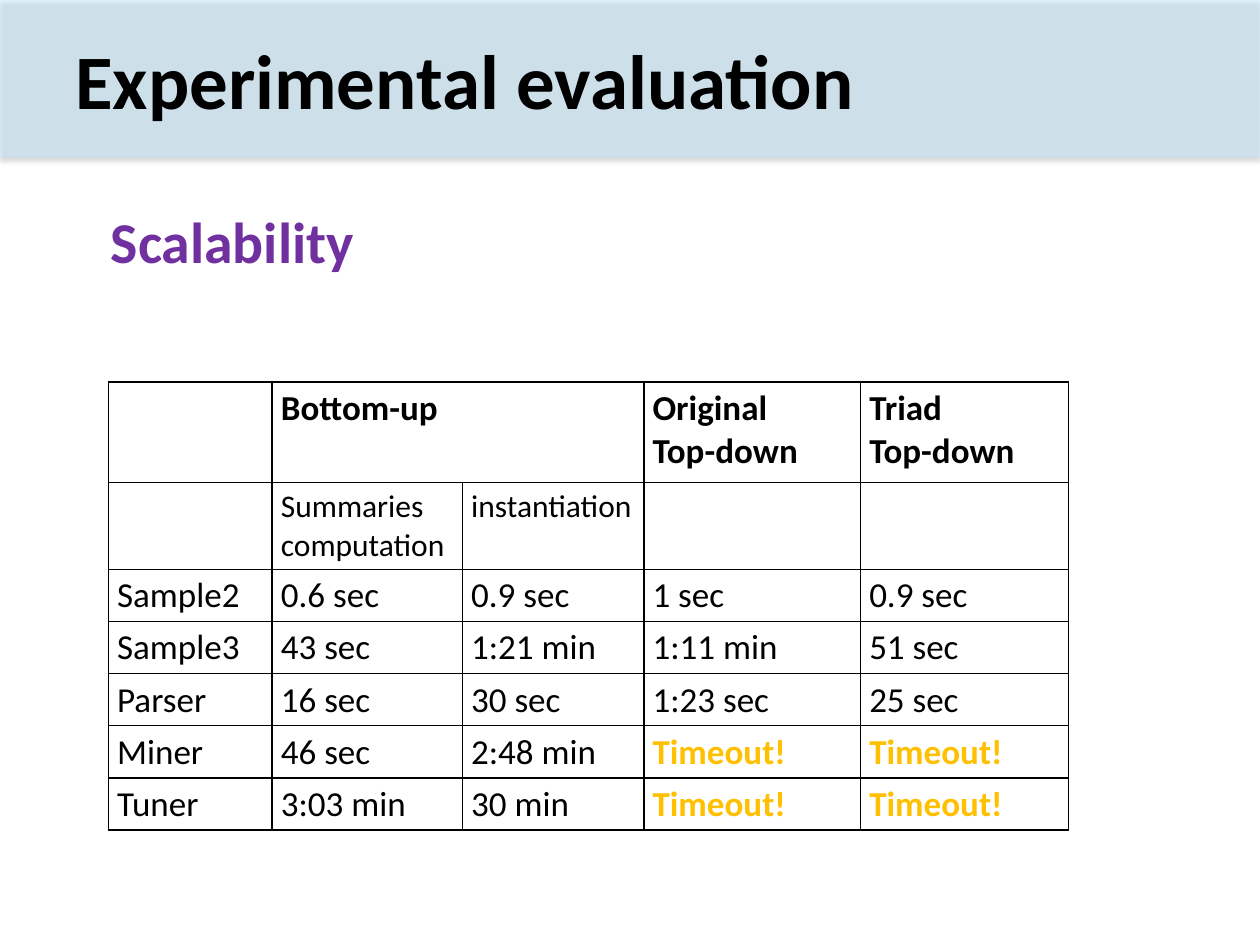
from dataclasses import dataclass

from lxml import etree
from pptx import Presentation, util as u
from pptx.dml.color import RGBColor
from pptx.enum import shapes, text
from pptx.oxml import parse_xml
from pptx.oxml.ns import nsdecls, qn

HUES = {"ink": "000000", "paper": "FFFFFF", "band": "C2EAFF",
        "topic": "7030A0", "alert": "FFC000"}
FONT = "Calibri"
PAD_X, PAD_Y = 0.07, 0.04


@dataclass
class Row:
    cells: tuple[str, ...]
    high: float = 0.41
    size: int = 20
    bold: bool = False
    fill: str | None = "paper"


COLS = (1.3, 1.51, 1.44, 1.72, 1.65)
ROWS = (
    Row(("", "Bottom-up", "", "Original\nTop-down", "Triad\nTop-down"),
        high=0.8, bold=True, fill=None),
    Row(("", "Summaries\ncomputation", "instantiation", "", ""),
        high=0.69, size=18),
    Row(("Sample2", "0.6 sec", "0.9 sec", "1 sec", "0.9 sec")),
    Row(("Sample3", "43 sec", "1:21 min", "1:11 min", "51 sec")),
    Row(("Parser", "16 sec", "30 sec", "1:23 sec", "25 sec")),
    Row(("Miner", "46 sec", "2:48 min", "Timeout!", "Timeout!")),
    Row(("Tuner", "3:03 min", "30 min", "Timeout!", "Timeout!")),
)


def write(frame, words: str, *, size: int, hue: str = "ink",
          bold: bool = False) -> None:
    """Put each line of words in its own paragraph."""
    for i, line in enumerate(words.split("\n")):
        para = frame.add_paragraph() if i else frame.paragraphs[0]
        para.alignment = text.PP_ALIGN.LEFT
        run = para.add_run()
        run.text = line
        font = run.font
        font.name, font.size, font.bold = FONT, u.Pt(size), bold
        font.color.rgb = RGBColor.from_string(HUES[hue])


def pad(item, x: float = PAD_X, y: float = PAD_Y) -> None:
    item.margin_left = item.margin_right = u.Inches(x)
    item.margin_top = item.margin_bottom = u.Inches(y)


def label(slide, words: str, box: tuple[float, ...], side: float,
          **style) -> None:
    frame = slide.shapes.add_textbox(*map(u.Inches, box)).text_frame
    frame.word_wrap = True
    frame.vertical_anchor = text.MSO_ANCHOR.MIDDLE
    pad(frame, x=side)
    write(frame, words, **style)


def band(slide) -> None:
    """Draw the translucent header band with its soft shadow."""
    bar = slide.shapes.add_shape(
        shapes.MSO_SHAPE.RECTANGLE, 0, 0, u.Inches(10), u.Inches(1.25))
    bar.shadow.inherit = False
    bar.line.fill.background()
    bar.fill.solid()
    bar.fill.fore_color.rgb = RGBColor.from_string(HUES["band"])
    props = bar.element.spPr
    tint = props.find(qn("a:solidFill"))[0]
    etree.SubElement(tint, qn("a:alpha"), val="45000")
    props.find(qn("a:effectLst")).append(parse_xml(
        f'<a:outerShdw {nsdecls("a")} blurRad="{u.Pt(3.1)}" '
        f'dist="{u.Pt(1.8)}" dir="5400000" rotWithShape="0">'
        f'<a:srgbClr val="{HUES["ink"]}"><a:alpha val="35000"/></a:srgbClr>'
        '</a:outerShdw>'))


def edge(cell) -> None:
    """Rule all four sides of a cell."""
    props = cell._tc.get_or_add_tcPr()
    for side in "LRTB":
        props.append(parse_xml(
            f'<a:ln{side} {nsdecls("a")} w="{u.Pt(1)}"><a:solidFill>'
            f'<a:srgbClr val="{HUES["ink"]}"/></a:solidFill></a:ln{side}>'))


def grid(slide, left: float, top: float) -> None:
    high = sum(row.high for row in ROWS)
    table = slide.shapes.add_table(
        len(ROWS), len(COLS), u.Inches(left), u.Inches(top),
        u.Inches(sum(COLS)), u.Inches(high)).table
    table.first_row = table.horz_banding = False
    for col, wide in zip(table.columns, COLS):
        col.width = u.Inches(wide)
    for r, row in enumerate(ROWS):
        table.rows[r].height = u.Inches(row.high)
        for c, words in enumerate(row.cells):
            cell = table.cell(r, c)
            pad(cell)
            edge(cell)
            if row.fill:
                cell.fill.solid()
                cell.fill.fore_color.rgb = RGBColor.from_string(HUES[row.fill])
            else:
                cell.fill.background()
            if words:
                late = words == "Timeout!"
                write(cell.text_frame, words, size=row.size,
                      bold=row.bold or late, hue="alert" if late else "ink")
    # Bottom-up heads two columns
    table.cell(0, 1).merge(table.cell(0, 2))


def main() -> None:
    deck = Presentation()
    deck.slide_width, deck.slide_height = u.Inches(10), u.Inches(7.5)
    slide = deck.slides.add_slide(deck.slide_layouts[6])
    band(slide)
    # Topic, results and title
    label(slide, "Scalability", (0.81, 1.36, 8.62, 1.09), PAD_X,
          size=33, hue="topic", bold=True)
    grid(slide, 0.86, 3.03)
    label(slide, "Experimental evaluation", (0.5, 0, 9.5, 1.25), 0.1,
          size=44, bold=True)
    deck.save("out.pptx")


if __name__ == "__main__":
    main()
